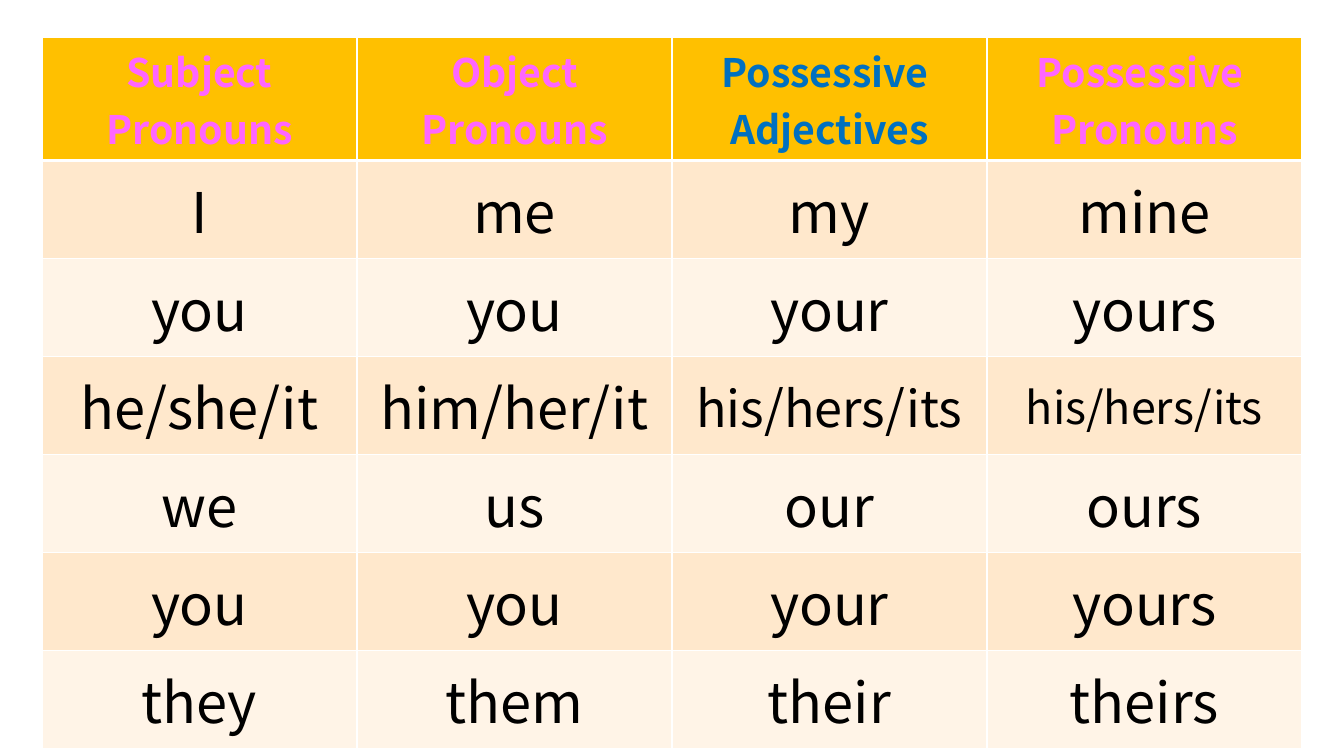
"""Build a slide with a table of English pronouns and possessives."""
import pptx
import pptx.dml.color
import pptx.enum.text
import pptx.oxml.ns
import pptx.util
import lxml.etree

RGB = pptx.dml.color.RGBColor
WHITE = RGB(0xFF, 0xFF, 0xFF)
BLACK = RGB(0x00, 0x00, 0x00)
GOLD = RGB(0xFF, 0xC0, 0x00)
PINK = RGB(0xFF, 0x66, 0xFF)
BLUE = RGB(0x00, 0x70, 0xC0)
PEACH = RGB(0xFF, 0xE8, 0xCC)
CREAM = RGB(0xFF, 0xF4, 0xE7)

FONT = "Noto Sans CJK JP"
HEADS = [
    ("Subject\nPronouns", PINK),
    ("Object\nPronouns", PINK),
    ("Possessive \nAdjectives", BLUE),
    ("Possessive \nPronouns", PINK),
]
WORDS = [
    ("I", "me", "my", "mine"),
    ("you", "you", "your", "yours"),
    ("he/she/it", "him/her/it", "his/hers/its", "his/hers/its"),
    ("we", "us", "our", "ours"),
    ("you", "you", "your", "yours"),
    ("they", "them", "their", "theirs"),
]
HEAD_SIZE, BODY_SIZE = 28, 40
SMALL = {(3, 2): 36, (3, 3): 32}

SCALE = 914400 / 100.8
LEFT, TOP, HEIGHT = 42, 37, 690
COL, ROW = 315, 98


def px(count):
    """Turn px into EMU."""
    return pptx.util.Emu(round(count * SCALE))


def add_border(cell, side, width):
    """Draw one white edge of a cell."""
    props = cell._tc.get_or_add_tcPr()
    qn = pptx.oxml.ns.qn
    line = lxml.etree.SubElement(props, qn("a:ln" + side), w=str(pptx.util.Pt(width)))
    fill = lxml.etree.SubElement(line, qn("a:solidFill"))
    lxml.etree.SubElement(fill, qn("a:srgbClr"), val=str(WHITE))


def fill_cell(cell, text, size, color, bold, back):
    """Set the text and fill of a cell."""
    cell.fill.solid()
    cell.fill.fore_color.rgb = back
    cell.text_frame.text = text
    for para in cell.text_frame.paragraphs:
        para.alignment = pptx.enum.text.PP_ALIGN.CENTER
        for run in para.runs:
            run.font.name = FONT
            run.font.size = pptx.util.Pt(size)
            run.font.bold = bold
            run.font.color.rgb = color


def main():
    """Lay out the table and save the deck."""
    deck = pptx.Presentation()
    deck.slide_width = px(1344)
    deck.slide_height = px(756)
    slide = deck.slides.add_slide(deck.slide_layouts[6])
    rows, cols = len(WORDS) + 1, len(HEADS)
    frame = slide.shapes.add_table(rows, cols, px(LEFT), px(TOP), px(COL * cols), px(HEIGHT))
    table = frame.table
    for col in table.columns:
        col.width = px(COL)
    for row in table.rows:
        row.height = px(ROW)

    for r in range(rows):
        for c in range(cols):
            cell = table.cell(r, c)
            thick = {0: "B", 1: "T"}.get(r)
            for side in "LRTB":
                add_border(cell, side, 3 if side == thick else 1)
            if r == 0:
                text, color = HEADS[c]
                fill_cell(cell, text, HEAD_SIZE, color, True, GOLD)
            else:
                size = SMALL.get((r, c), BODY_SIZE)
                back = PEACH if r % 2 else CREAM
                fill_cell(cell, WORDS[r - 1][c], size, BLACK, False, back)
                cell.vertical_anchor = pptx.enum.text.MSO_ANCHOR.MIDDLE
    deck.save("out.pptx")


if __name__ == "__main__":
    main()
